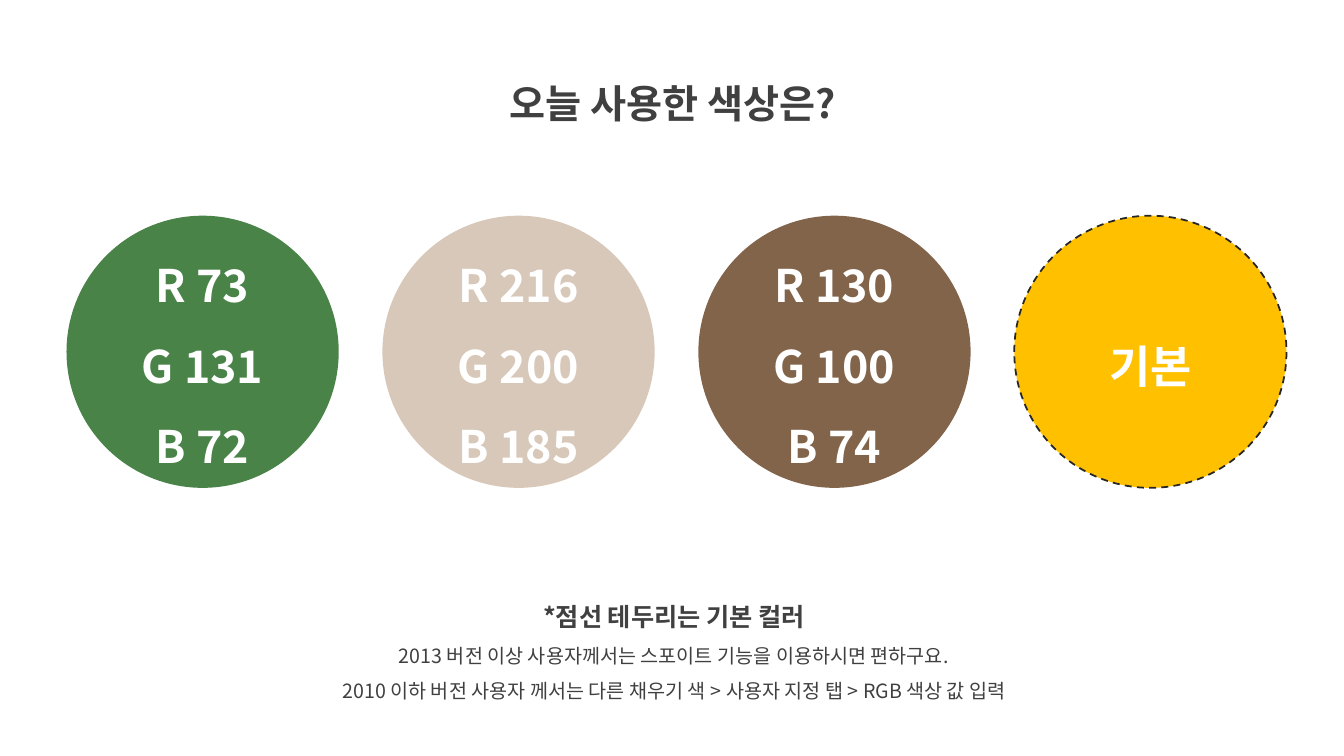
from dataclasses import dataclass

from lxml.etree import SubElement
from pptx import Presentation
from pptx.dml.color import RGBColor
from pptx.enum.dml import MSO_LINE
from pptx.enum.shapes import MSO_SHAPE
from pptx.enum.text import MSO_ANCHOR, MSO_AUTO_SIZE, PP_ALIGN
from pptx.oxml.ns import qn
from pptx.util import Inches, Pt

TITLE = "오늘 사용한 색상은?"
NOTES = [
    "*점선 테두리는 기본 컬러",
    "2013 버전 이상 사용자께서는 스포이트 기능을 이용하시면 편하구요.",
    "2010 이하 버전 사용자 께서는 다른 채우기 색 > 사용자 지정 탭 > RGB 색상 값 입력",
]
PALETTE = [(73, 131, 72), (216, 200, 185), (130, 100, 74)]
BASIC_LABEL = "기본"


@dataclass(frozen=True)
class Theme:
    font: str = "Noto Sans CJK KR"
    text: RGBColor = RGBColor(0x40, 0x40, 0x40)
    label: RGBColor = RGBColor(0xFF, 0xFF, 0xFF)
    basic: RGBColor = RGBColor(0xFF, 0xC0, 0x00)
    outline: RGBColor = RGBColor(0x26, 0x26, 0x26)
    title_size: int = 28
    label_size: int = 32
    heading_size: int = 18
    note_size: int = 14
    line_spacing: float = 1.5


THEME = Theme()
CIRCLE_LEFT, CIRCLE_TOP, CIRCLE_SIZE, CIRCLE_PITCH = 0.66, 2.14, 2.7, 9.4 / 3


def place(shape, left, top, width, height):
    shape.left, shape.top = Inches(left), Inches(top)
    shape.width, shape.height = Inches(width), Inches(height)


def write_lines(text_frame, lines, color):
    """Fill the frame with centred lines, each given as (text, size, bold)."""
    text_frame.word_wrap = True
    text_frame.text = "\n".join(text for text, _, _ in lines)
    for paragraph, (_, size, bold) in zip(text_frame.paragraphs, lines):
        paragraph.alignment = PP_ALIGN.CENTER
        paragraph.line_spacing = THEME.line_spacing
        paragraph.space_before = Pt(0)
        font = paragraph.font
        font.name, font.size, font.bold = THEME.font, Pt(size), bold
        font.color.rgb = color
        properties = paragraph._p.pPr
        east_asian = SubElement(properties.find(qn("a:defRPr")), qn("a:ea"))
        east_asian.set("typeface", THEME.font)


def fill_placeholder(placeholder, box, lines):
    place(placeholder, *box)
    text_frame = placeholder.text_frame
    write_lines(text_frame, lines, THEME.text)
    text_frame.vertical_anchor = MSO_ANCHOR.TOP
    text_frame.auto_size = MSO_AUTO_SIZE.SHAPE_TO_FIT_TEXT


def remove_bullets(text_frame):
    for paragraph in text_frame.paragraphs:
        properties = paragraph._p.pPr
        properties.set("marL", "0")
        properties.set("indent", "0")
        bullet = SubElement(properties, qn("a:buNone"))
        properties.find(qn("a:defRPr")).addprevious(bullet)


def add_circle(slide, index, fill, labels):
    circle = slide.shapes.add_shape(
        MSO_SHAPE.OVAL,
        Inches(CIRCLE_LEFT + index * CIRCLE_PITCH), Inches(CIRCLE_TOP),
        Inches(CIRCLE_SIZE), Inches(CIRCLE_SIZE),
    )
    circle.shadow.inherit = False
    circle.fill.solid()
    circle.fill.fore_color.rgb = fill
    circle.line.fill.background()
    circle.text_frame.vertical_anchor = MSO_ANCHOR.MIDDLE
    lines = [(label, THEME.label_size, True) for label in labels]
    write_lines(circle.text_frame, lines, THEME.label)
    return circle


def main():
    presentation = Presentation()
    presentation.slide_width, presentation.slide_height = Inches(13.33), Inches(7.5)
    slide = presentation.slides.add_slide(presentation.slide_layouts[1])

    title, notes = slide.shapes.title, slide.placeholders[1]
    fill_placeholder(title, (4.36, 0.5, 4.63, 0.72), [(TITLE, THEME.title_size, True)])
    heading, *details = NOTES
    note_lines = [(heading, THEME.heading_size, True)]
    note_lines += [(detail, THEME.note_size, False) for detail in details]
    fill_placeholder(notes, (2.69, 5.77, 7.99, 1.26), note_lines)
    remove_bullets(notes.text_frame)

    for index, color in enumerate(PALETTE):
        labels = [f"{channel} {value}" for channel, value in zip("RGB", color)]
        add_circle(slide, index, RGBColor(*color), labels)

    basic = add_circle(slide, len(PALETTE), THEME.basic, [BASIC_LABEL])
    basic.line.color.rgb = THEME.outline
    basic.line.width = Pt(1.25)
    basic.line.dash_style = MSO_LINE.DASH

    presentation.save("out.pptx")


if __name__ == "__main__":
    main()
